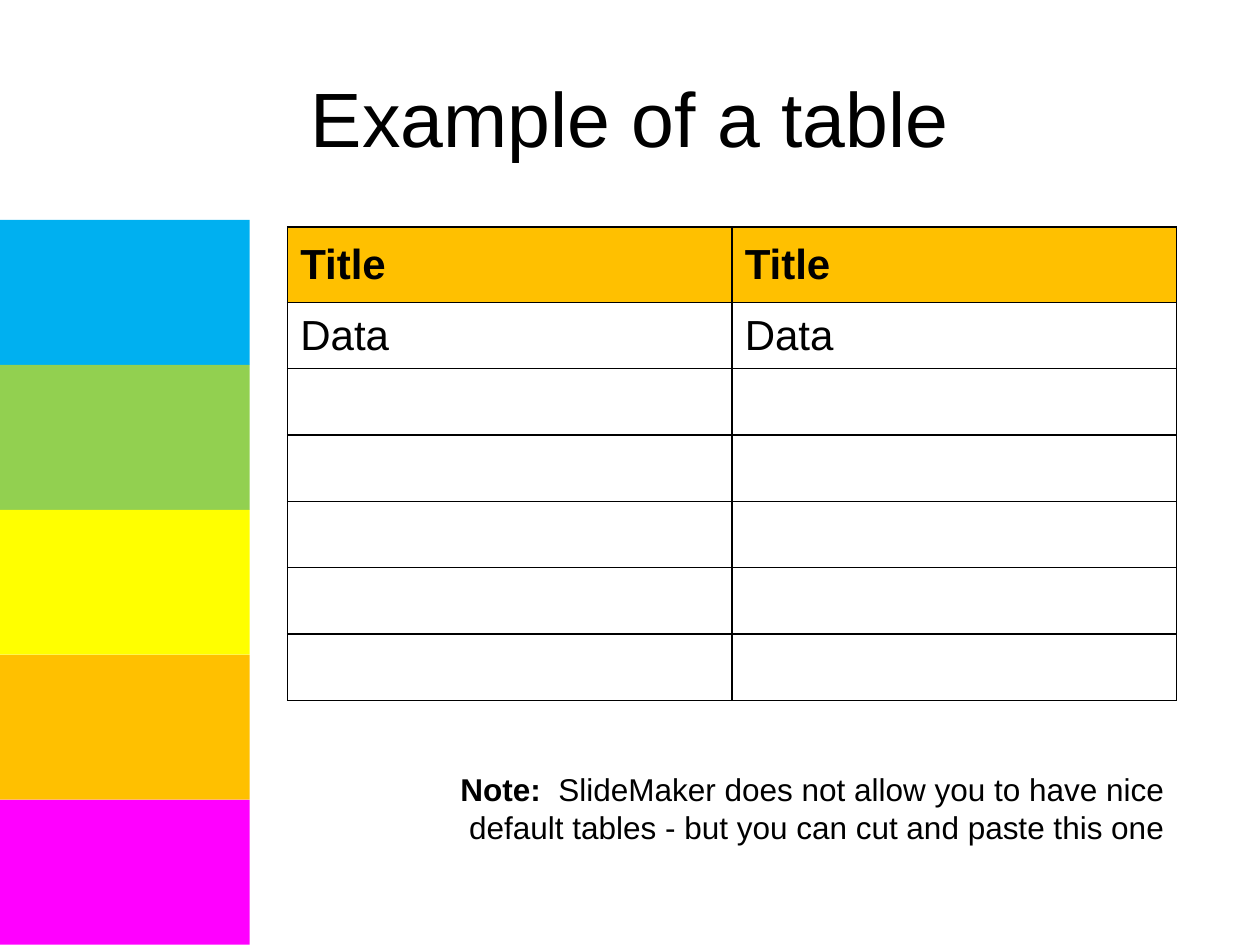
from dataclasses import dataclass

from pptx import Presentation
from pptx.dml.color import RGBColor as Rgb
from pptx.enum.shapes import MSO_SHAPE as Shape
from pptx.enum.text import MSO_ANCHOR as Anchor, MSO_AUTO_SIZE as AutoSize, PP_ALIGN as Align
from pptx.oxml.ns import qn
from pptx.oxml.xmlchemy import OxmlElement as Element
from pptx.util import Pt


@dataclass(frozen=True)
class Theme:
    font: str = "Arial"
    ink: str = "000000"
    header: str = "FFC000"
    bands: tuple = ("00B0F0", "92D050", "FFFF00", "FFC000", "FF00FF")
    title_size: float = 44
    table_size: float = 24
    note_size: float = 18
    border: float = 1


def apply(target, values):
    for name, value in values.items():
        setattr(target, name, value)


class SlideStyle:
    """Holds the theme and the slide being built."""

    def __init__(self, theme, slide):
        self.theme = theme
        self.slide = slide

    def add_words(self, paragraph, wording, size, bold=False):
        run = paragraph.add_run()
        run.text = wording
        apply(run.font, {"name": self.theme.font, "size": Pt(size), "bold": bold})
        run.font.color.rgb = Rgb.from_string(self.theme.ink)

    def bands(self, top, width, height):
        for index, colour in enumerate(self.theme.bands):
            band = self.slide.shapes.add_shape(
                Shape.RECTANGLE, Pt(0), Pt(top + index * height), Pt(width), Pt(height))
            band.shadow.inherit = False
            band.fill.solid()
            band.fill.fore_color.rgb = Rgb.from_string(colour)
            band.line.fill.background()

    def title(self, wording, left, top, width, height):
        heading = self.slide.shapes.title
        apply(heading, {"left": Pt(left), "top": Pt(top),
                        "width": Pt(width), "height": Pt(height)})
        apply(heading.text_frame, {"vertical_anchor": Anchor.MIDDLE, "word_wrap": True})
        paragraph = heading.text_frame.paragraphs[0]
        paragraph.alignment = Align.CENTER
        self.add_words(paragraph, wording, self.theme.title_size)

    def outline(self, cell):
        properties = cell._tc.get_or_add_tcPr()
        for position, side in enumerate(("a:lnL", "a:lnR", "a:lnT", "a:lnB")):
            edge = Element(side)
            edge.set("w", str(Pt(self.theme.border)))
            paint = Element("a:solidFill")
            colour = Element("a:srgbClr")
            colour.set("val", self.theme.ink)
            paint.append(colour)
            edge.append(paint)
            properties.insert(position, edge)

    def table(self, rows, left, top, column_width, header_height, row_height):
        columns = len(rows[0])
        height = header_height + row_height * (len(rows) - 1)
        grid = self.slide.shapes.add_table(
            len(rows), columns, Pt(left), Pt(top), Pt(column_width * columns), Pt(height)).table
        apply(grid, {"first_row": False, "horz_banding": False})
        for column in grid.columns:
            column.width = Pt(column_width)
        for index, entries in enumerate(rows):
            is_header = index == 0
            grid.rows[index].height = Pt(header_height if is_header else row_height)
            for cell, entry in zip(grid.rows[index].cells, entries):
                cell.vertical_anchor = Anchor.MIDDLE
                if is_header:
                    cell.fill.solid()
                    cell.fill.fore_color.rgb = Rgb.from_string(self.theme.header)
                else:
                    cell.fill.background()
                self.outline(cell)
                if entry:
                    self.add_words(cell.text_frame.paragraphs[0], entry,
                                   self.theme.table_size, is_header)

    def note(self, label, wording, left, top, width, height):
        frame = self.slide.shapes.add_textbox(
            Pt(left), Pt(top), Pt(width), Pt(height)).text_frame
        apply(frame, {"word_wrap": True, "auto_size": AutoSize.SHAPE_TO_FIT_TEXT})
        paragraph = frame.paragraphs[0]
        paragraph.alignment = Align.RIGHT
        self.add_words(paragraph, label, self.theme.note_size, bold=True)
        self.add_words(paragraph, wording, self.theme.note_size)


def main():
    deck = Presentation()
    apply(deck, {"slide_width": Pt(720), "slide_height": Pt(540)})
    title_only = deck.slide_layouts[5]
    page = SlideStyle(Theme(), deck.slides.add_slide(title_only))
    page.bands(top=125.6, width=142.6, height=82.85)
    page.title("Example of a table", left=36, top=21.6, width=648, height=90)
    page.table([("Title", "Title"), ("Data", "Data")] + [("", "")] * 5,
               left=164.4, top=129.6, column_width=254, header_height=43.2, row_height=37.9)
    page.note("Note:  ", "SlideMaker does not allow you to have nice default tables"
              " - but you can cut and paste this one",
              left=207.4, top=436.5, width=465, height=51)
    deck.save("out.pptx")


if __name__ == "__main__":
    main()
